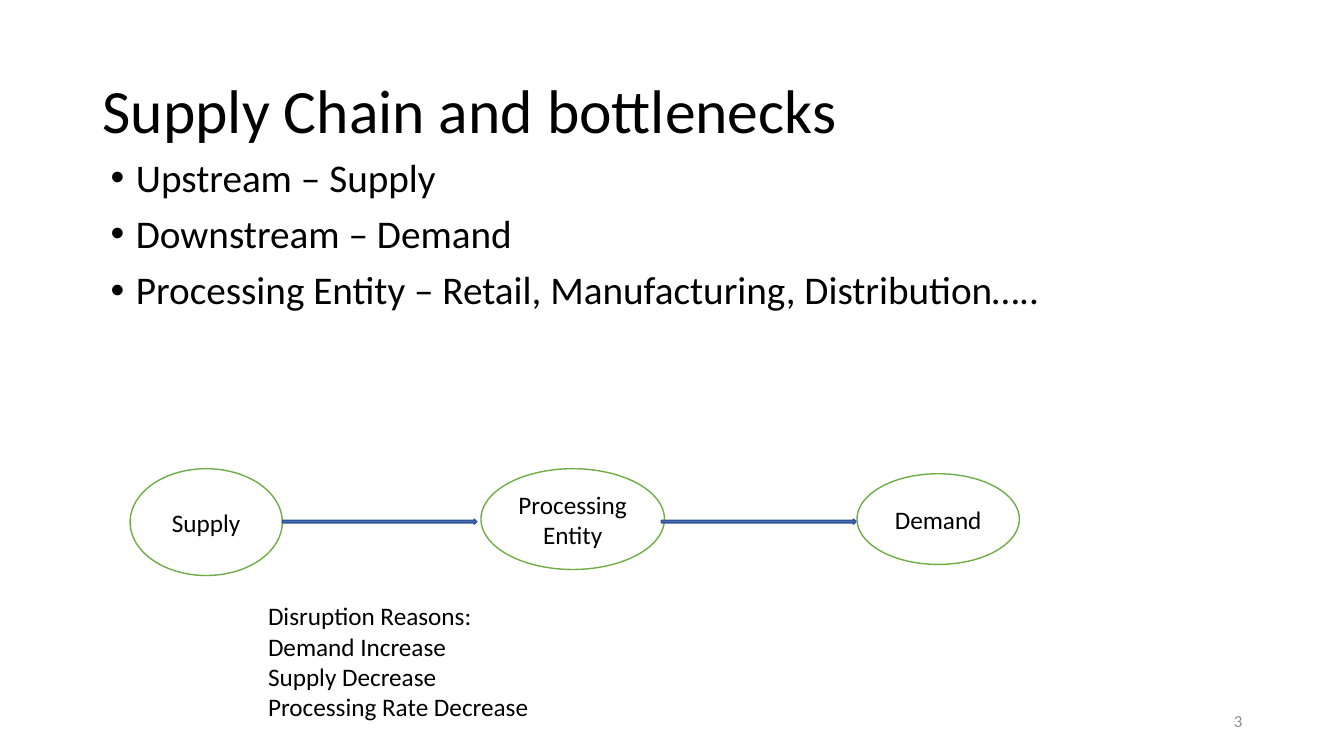
from lxml.etree import SubElement
from pptx import Presentation
from pptx.dml.color import RGBColor
from pptx.enum.shapes import MSO_SHAPE
from pptx.enum.text import MSO_ANCHOR, MSO_AUTO_SIZE, PP_ALIGN
from pptx.oxml.ns import qn
from pptx.util import Inches, Pt

THEME = {
    "font": "Calibri",
    "text": RGBColor(0x00, 0x00, 0x00),
    "muted": RGBColor(0x8C, 0x8C, 0x8C),
    "node_fill": RGBColor(0xFF, 0xFF, 0xFF),
    "node_line": RGBColor(0x70, 0xAD, 0x47),
    "arrow_fill": RGBColor(0x44, 0x72, 0xC4),
    "arrow_line": RGBColor(0x32, 0x54, 0x91),
    "title": Pt(44),
    "bullet": Pt(28),
    "label": Pt(18),
    "number": Pt(12),
}


def write(sp, text, size, color="text", align=PP_ALIGN.LEFT, anchor=MSO_ANCHOR.MIDDLE):
    tf = sp.text_frame
    tf.text = text
    tf.word_wrap = True
    tf.vertical_anchor = anchor
    for p in tf.paragraphs:
        p.alignment = align
        for r in p.runs:
            r.font.name = THEME["font"]
            r.font.size = THEME[size]
            r.font.color.rgb = THEME[color]
    return tf


def add_flow_shape(kind, box, role):
    sp = s.shapes.add_shape(kind, *map(Inches, box))
    sp.shadow.inherit = False
    sp.fill.solid()
    sp.fill.fore_color.rgb = THEME[role + "_fill"]
    sp.line.color.rgb = THEME[role + "_line"]
    sp.line.width = Pt(1)
    return sp


prs = Presentation()
prs.slide_width = Inches(13.33)
prs.slide_height = Inches(7.5)
s = prs.slides.add_slide(prs.slide_layouts[6])

title = s.shapes.add_textbox(Inches(0.92), Inches(0.4), Inches(11.5), Inches(1.45))
tf = write(title, "Supply Chain and bottlenecks", "title")
tf.paragraphs[0].line_spacing = 0.9

bullets = [
    "Upstream – Supply",
    "Downstream – Demand",
    "Processing Entity – Retail, Manufacturing, Distribution…..",
]
body = s.shapes.add_textbox(Inches(1), Inches(1.52), Inches(11.5), Inches(4.76))
tf = write(body, "\n".join(bullets), "bullet", anchor=MSO_ANCHOR.TOP)
for p in tf.paragraphs:
    p.line_spacing = 0.9
    p.space_before = Pt(10)
    pPr = p._p.get_or_add_pPr()
    pPr.set("marL", str(Inches(0.25)))
    pPr.set("indent", str(-Inches(0.25)))
    SubElement(pPr, qn("a:buFont"), typeface="Arial")
    SubElement(pPr, qn("a:buChar"), char="•")

nodes = [
    ("Supply", (1.29, 4.65, 1.51, 1.06)),
    ("Processing Entity", (4.77, 4.65, 1.82, 1)),
    ("Demand", (8.5, 4.7, 1.61, 0.9)),
]
for label, box in nodes:
    sp = add_flow_shape(MSO_SHAPE.OVAL, box, "node")
    write(sp, label, "label", align=PP_ALIGN.CENTER)

for left in (6.56, 2.8):
    add_flow_shape(MSO_SHAPE.RIGHT_ARROW, (left, 5.15, 1.93, 0.05), "arrow")

reasons = ["Disruption Reasons:", "Demand Increase", "Supply Decrease", "Processing Rate Decrease"]
notes = s.shapes.add_textbox(Inches(2.56), Inches(5.91), Inches(2.81), Inches(1.31))
tf = write(notes, "\n".join(reasons), "label", anchor=MSO_ANCHOR.TOP)
tf.word_wrap = False
tf.auto_size = MSO_AUTO_SIZE.SHAPE_TO_FIT_TEXT

number = s.shapes.add_textbox(Inches(9.42), Inches(6.95), Inches(3), Inches(0.4))
write(number, "3", "number", color="muted", align=PP_ALIGN.RIGHT)

prs.save("out.pptx")
